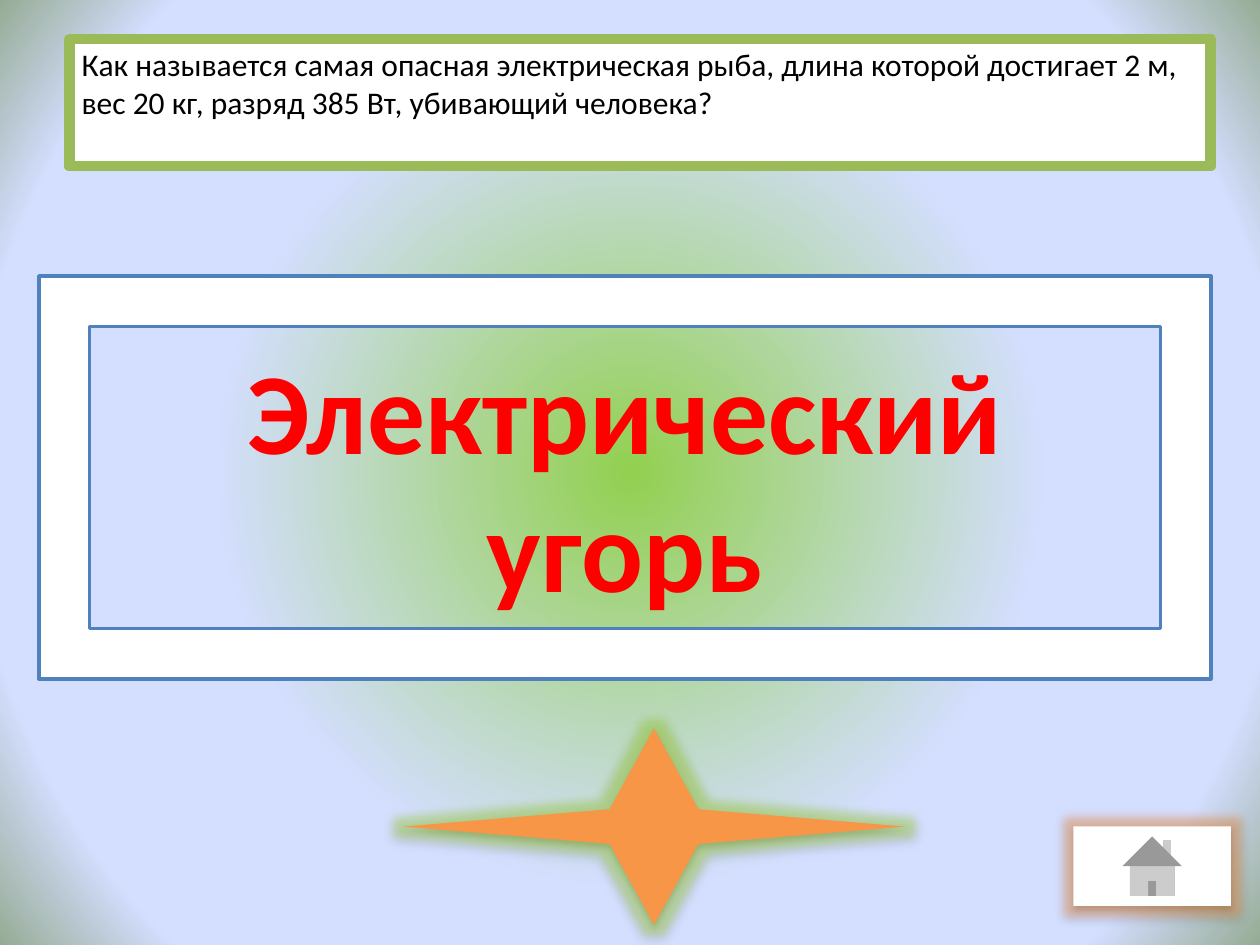
from typing import NamedTuple, Optional

from lxml.etree import SubElement
from pptx import Presentation
from pptx.dml.color import RGBColor
from pptx.enum.shapes import MSO_SHAPE
from pptx.enum.text import MSO_ANCHOR, MSO_AUTO_SIZE, PP_ALIGN
from pptx.oxml.ns import qn
from pptx.util import Pt

HUES = {
    "white": "FFFFFF", "black": "000000", "red": "FF0000",
    "green": "9BBB59", "orange": "F79646", "blue": "4F81BD",
    "lime": "92D050", "sky": "D4DEFF", "moss": "96AB94",
}
STOPS = [(0, "lime", 67), (53, "sky", 100), (83, "sky", 100), (100, "moss", 100)]


class Box(NamedTuple):
    kind: MSO_SHAPE
    left: float
    top: float
    width: float
    height: float
    fill: str
    line: Optional[str] = None
    weight: float = 0
    glow: Optional[str] = None


class Label(NamedTuple):
    text: str
    size: float
    hue: str
    bold: bool = False
    align: PP_ALIGN = PP_ALIGN.LEFT
    anchor: MSO_ANCHOR = MSO_ANCHOR.TOP
    fit: MSO_AUTO_SIZE = MSO_AUTO_SIZE.NONE


QUERY = Box(MSO_SHAPE.RECTANGLE, 39.6, 22.3, 652.3, 72.7, "white", "green", 6)
STAR = Box(MSO_SHAPE.STAR_4_POINT, 230.4, 416.2, 286.6, 112.3, "orange", glow="green")
FRAME = Box(MSO_SHAPE.FRAME, 22.3, 157.7, 669.6, 230.4, "white", "blue", 2)
HOME = Box(MSO_SHAPE.ACTION_BUTTON_HOME, 613.4, 472.3, 90, 45.4, "white", glow="orange")
ASK = Label(
    "Как называется самая опасная электрическая рыба, длина которой достигает 2 м, "
    "вес 20 кг, разряд 385 Вт, убивающий человека? ",
    18, "black", fit=MSO_AUTO_SIZE.SHAPE_TO_FIT_TEXT,
)
REPLY = Label(
    "Электрический угорь", 66, "red", True, PP_ALIGN.CENTER, MSO_ANCHOR.MIDDLE
)


def rgb(hue: str) -> RGBColor:
    """Look up a named colour."""
    return RGBColor.from_string(HUES[hue])


def add_hue(node, hue: str, alpha: int):
    """Append a colour with opacity in percent and return it."""
    item = SubElement(node, qn("a:srgbClr"), val=HUES[hue])
    if alpha < 100:
        SubElement(item, qn("a:alpha"), val=str(alpha * 1000))
    return item


def paint(slide) -> None:
    """Give the slide a circular gradient background."""
    slide.background.fill.gradient()
    grad = slide.element.find(".//" + qn("a:gradFill"))
    for child in list(grad):
        grad.remove(child)
    stops = SubElement(grad, qn("a:gsLst"))
    for pos, hue, alpha in STOPS:
        add_hue(SubElement(stops, qn("a:gs"), pos=str(pos * 1000)), hue, alpha)
    path = SubElement(grad, qn("a:path"), path="circle")
    sides = {side: "50000" for side in "ltrb"}
    SubElement(path, qn("a:fillToRect"), **sides)


def add_glow(shape, hue: str) -> None:
    """Surround a shape with a glow and drop a soft shadow."""
    list_ = shape.element.spPr.find(qn("a:effectLst"))
    glow = SubElement(list_, qn("a:glow"), rad=str(Pt(11)))
    SubElement(add_hue(glow, hue, 40), qn("a:satMod"), val="175000")
    shade = SubElement(
        list_, qn("a:outerShdw"), blurRad=str(Pt(3.5)), dist=str(Pt(2.2)),
        dir="5400000", rotWithShape="0",
    )
    add_hue(shade, "black", 32)


def draw(slide, box: Box):
    """Draw a filled shape with its outline or glow."""
    shape = slide.shapes.add_shape(
        box.kind, Pt(box.left), Pt(box.top), Pt(box.width), Pt(box.height)
    )
    shape.shadow.inherit = False
    shape.fill.solid()
    shape.fill.fore_color.rgb = rgb(box.fill)
    if box.line:
        shape.line.color.rgb = rgb(box.line)
        shape.line.width = Pt(box.weight)
    else:
        shape.line.fill.background()
    if box.glow:
        add_glow(shape, box.glow)
    return shape


def write(shape, label: Label) -> None:
    """Set the text of a shape and format it."""
    frame = shape.text_frame
    frame.text = label.text
    frame.word_wrap = True
    frame.auto_size = label.fit
    frame.vertical_anchor = label.anchor
    para = frame.paragraphs[0]
    para.alignment = label.align
    font = para.runs[0].font
    font.name = "Calibri"
    font.size = Pt(label.size)
    font.bold = label.bold
    font.color.rgb = rgb(label.hue)


def main() -> None:
    """Build the quiz slide and save it."""
    deck = Presentation()
    deck.slide_width, deck.slide_height = Pt(720), Pt(540)
    slide = deck.slides.add_slide(deck.slide_layouts[6])
    paint(slide)
    write(draw(slide, QUERY), ASK)
    draw(slide, STAR)
    write(draw(slide, FRAME), REPLY)
    draw(slide, HOME)
    deck.save("out.pptx")


if __name__ == "__main__":
    main()
